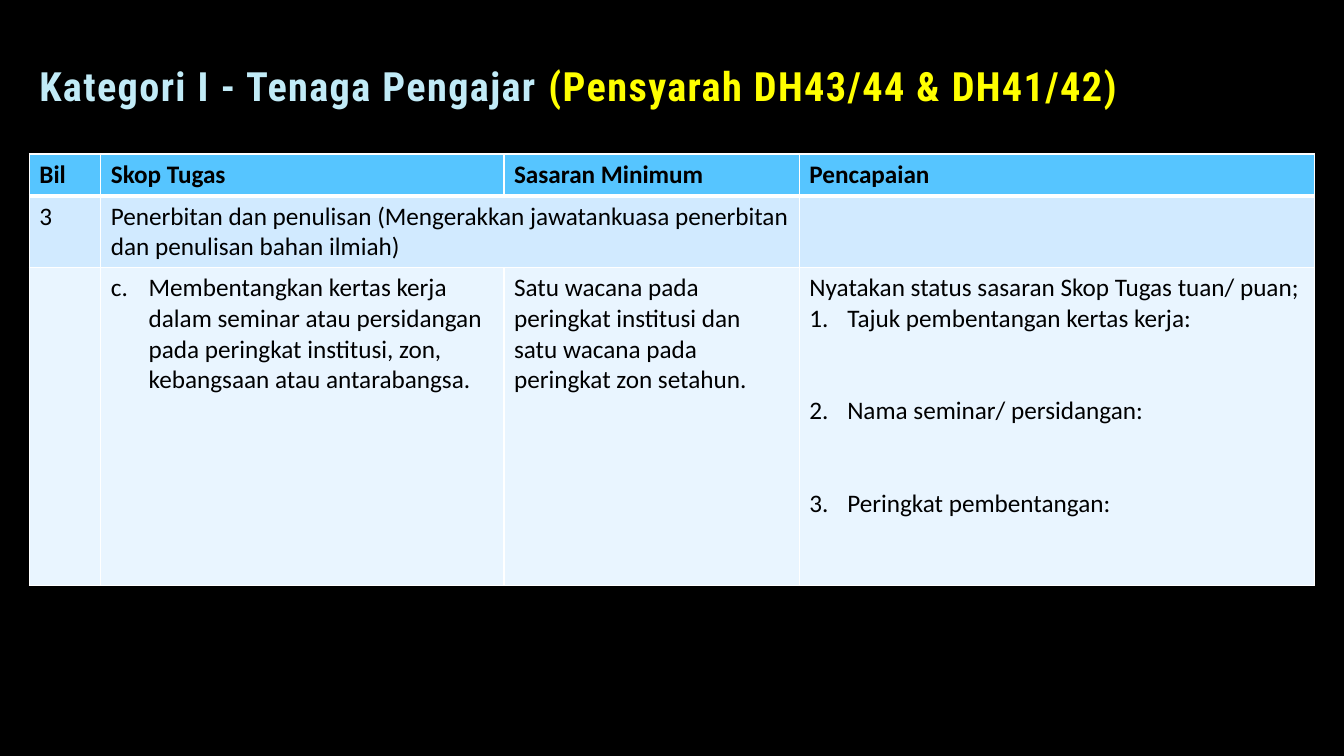
from lxml import etree
from pptx import Presentation, util as u
from pptx.dml.color import RGBColor
from pptx.enum import text
from pptx.oxml.ns import qn

COLORS = {
    "background": "000000", "text": "000000", "border": "FFFFFF",
    "title": "C1EBF7", "accent": "FFFF00", "outline": "404040",
    "header": "56C5FF", "topic": "D1EAFF", "detail": "E9F5FF",
}
TITLE = [("Kategori I - Tenaga Pengajar ", "title"),
         ("(Pensyarah DH43/44 & DH41/42)", "accent")]

# Each paragraph: text, numbering scheme, first number, space before
ROWS = [
    ("header", 30, [[("Bil", None, 1, 0)], [("Skop Tugas", None, 1, 0)],
                    [("Sasaran Minimum", None, 1, 0)], [("Pencapaian", None, 1, 0)]]),
    ("topic", 51, [
        [("3", None, 1, 0)],
        [("Penerbitan dan penulisan (Mengerakkan jawatankuasa penerbitan "
          "dan penulisan bahan ilmiah)", None, 1, 0)],
        [], []]),
    ("detail", 227, [
        [],
        [("Membentangkan kertas kerja dalam seminar atau persidangan pada peringkat "
          "institusi, zon, kebangsaan atau antarabangsa.", "alphaLcPeriod", 3, 0)],
        [("Satu wacana pada peringkat institusi dan satu wacana pada peringkat "
          "zon setahun.", None, 1, 0)],
        [("Nyatakan status sasaran Skop Tugas tuan/ puan;", None, 1, 0),
         ("Tajuk pembentangan kertas kerja:", "arabicPeriod", 1, 0),
         ("Nama seminar/ persidangan:", "arabicPeriod", 1, 44),
         ("Peringkat pembentangan:", "arabicPeriod", 1, 44)]]),
]
COLUMN_WIDTHS = [51, 288, 211, 368]
LEFT, TABLE_TOP = 21, 110
HANGING_INDENT = 27


def color(name):
    return RGBColor.from_string(COLORS[name])


def add_solid_fill(parent, name, alpha=None):
    fill = etree.SubElement(parent, qn("a:solidFill"))
    tint = etree.SubElement(fill, qn("a:srgbClr"), val=COLORS[name])
    if alpha:
        etree.SubElement(tint, qn("a:alpha"), val=str(alpha * 1000))


def add_run(paragraph, content, font_name, size, color_name, bold):
    run = paragraph.add_run()
    run.text = content
    run.font.name = font_name
    run.font.size = u.Pt(size)
    run.font.bold = bold
    run.font.color.rgb = color(color_name)
    return run


def add_numbering(paragraph, scheme, start):
    properties = paragraph._p.get_or_add_pPr()
    properties.set("marL", str(u.Pt(HANGING_INDENT)))
    properties.set("indent", str(-u.Pt(HANGING_INDENT)))
    etree.SubElement(properties, qn("a:buFont"), typeface="+mj-lt")
    bullet = etree.SubElement(properties, qn("a:buAutoNum"), type=scheme)
    if start > 1:
        bullet.set("startAt", str(start))


def set_borders(cell, row_index):
    """Draw thin white edges, with a thick one below the header row."""
    widths = {"L": 1, "R": 1, "T": 3 if row_index == 1 else 1,
              "B": 3 if row_index == 0 else 1}
    properties = cell._tc.get_or_add_tcPr()
    for side, width in widths.items():
        line = etree.SubElement(properties, qn(f"a:ln{side}"), w=str(u.Pt(width)))
        add_solid_fill(line, "border")


def fill_cell(cell, paragraphs, row_index, kind):
    set_borders(cell, row_index)
    cell.fill.solid()
    cell.fill.fore_color.rgb = color(kind)
    if kind == "header":
        cell.vertical_anchor = text.MSO_ANCHOR.MIDDLE
    frame = cell.text_frame
    for index, (content, scheme, start, gap) in enumerate(paragraphs):
        paragraph = frame.add_paragraph() if index else frame.paragraphs[0]
        if gap:
            paragraph.space_before = u.Pt(gap)
        if scheme:
            add_numbering(paragraph, scheme, start)
        add_run(paragraph, content, "Calibri", 18, "text", kind == "header")


def add_title(slide):
    box = slide.shapes.add_textbox(u.Pt(LEFT), u.Pt(34), u.Pt(819), u.Pt(48))
    frame = box.text_frame
    frame.word_wrap = True
    frame.vertical_anchor = text.MSO_ANCHOR.BOTTOM
    paragraph = frame.paragraphs[0]
    paragraph.line_spacing = 0.9
    for content, color_name in TITLE:
        run = add_run(paragraph, content, "Roboto Condensed", 28.8, color_name, True)
        properties = run._r.get_or_add_rPr()
        properties.set("spc", "100")
        outline = etree.Element(qn("a:ln"), w=str(u.Pt(0.75)))
        add_solid_fill(outline, "outline", alpha=10)
        properties.insert(0, outline)


def add_task_table(slide):
    frame = slide.shapes.add_table(
        len(ROWS), len(COLUMN_WIDTHS), u.Pt(LEFT), u.Pt(TABLE_TOP),
        u.Pt(sum(COLUMN_WIDTHS)), u.Pt(sum(height for _, height, _ in ROWS)))
    table = frame.table
    for column, width in zip(table.columns, COLUMN_WIDTHS):
        column.width = u.Pt(width)
    for row_index, (kind, height, cells) in enumerate(ROWS):
        table.rows[row_index].height = u.Pt(height)
        for column_index, paragraphs in enumerate(cells):
            fill_cell(table.cell(row_index, column_index), paragraphs, row_index, kind)
    table.cell(1, 1).merge(table.cell(1, 2))


def main():
    presentation = Presentation()
    presentation.slide_width, presentation.slide_height = u.Pt(960), u.Pt(540)
    slide = presentation.slides.add_slide(presentation.slide_layouts[6])
    slide.background.fill.solid()
    slide.background.fill.fore_color.rgb = color("background")
    add_task_table(slide)
    add_title(slide)
    presentation.save("out.pptx")


if __name__ == "__main__":
    main()
